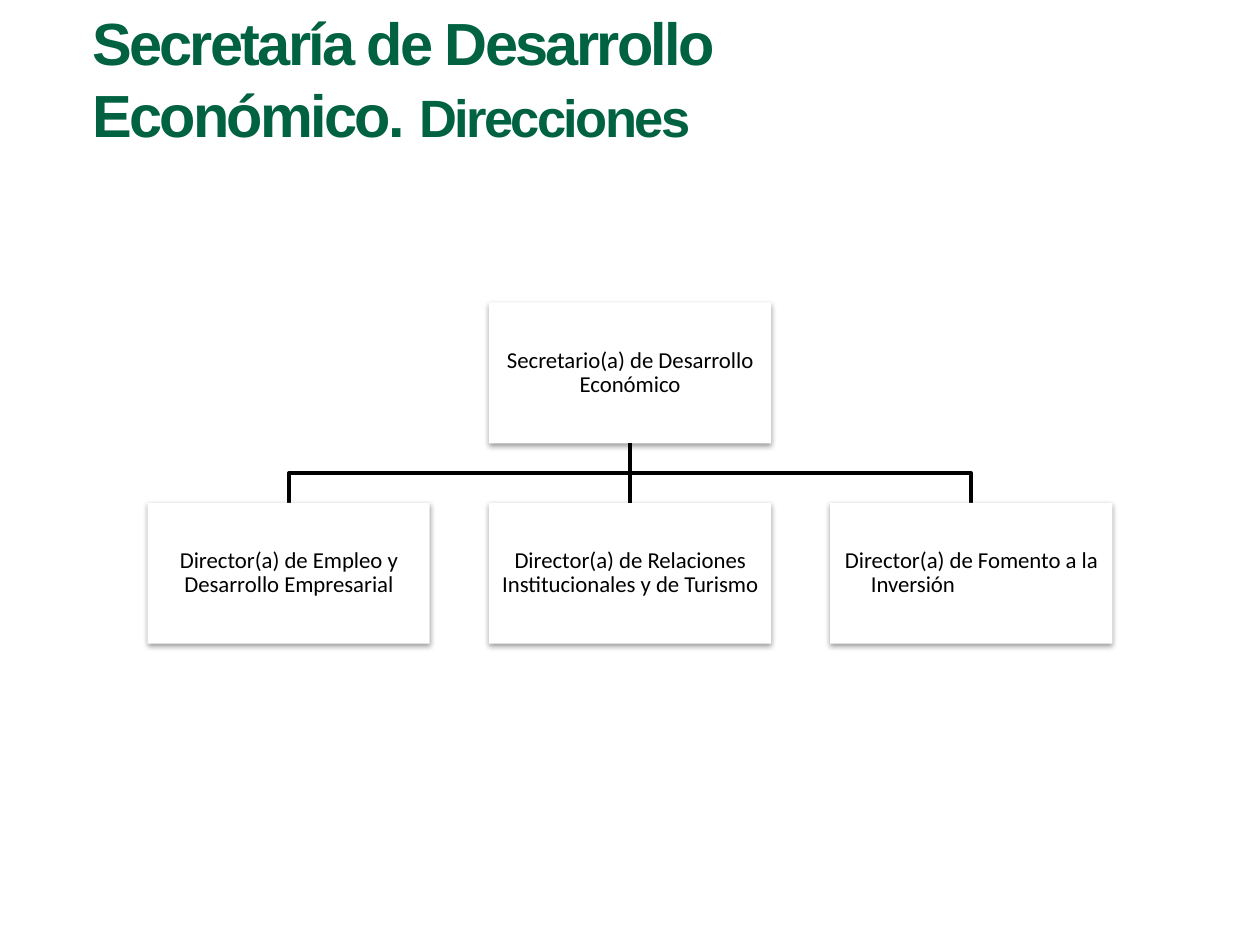
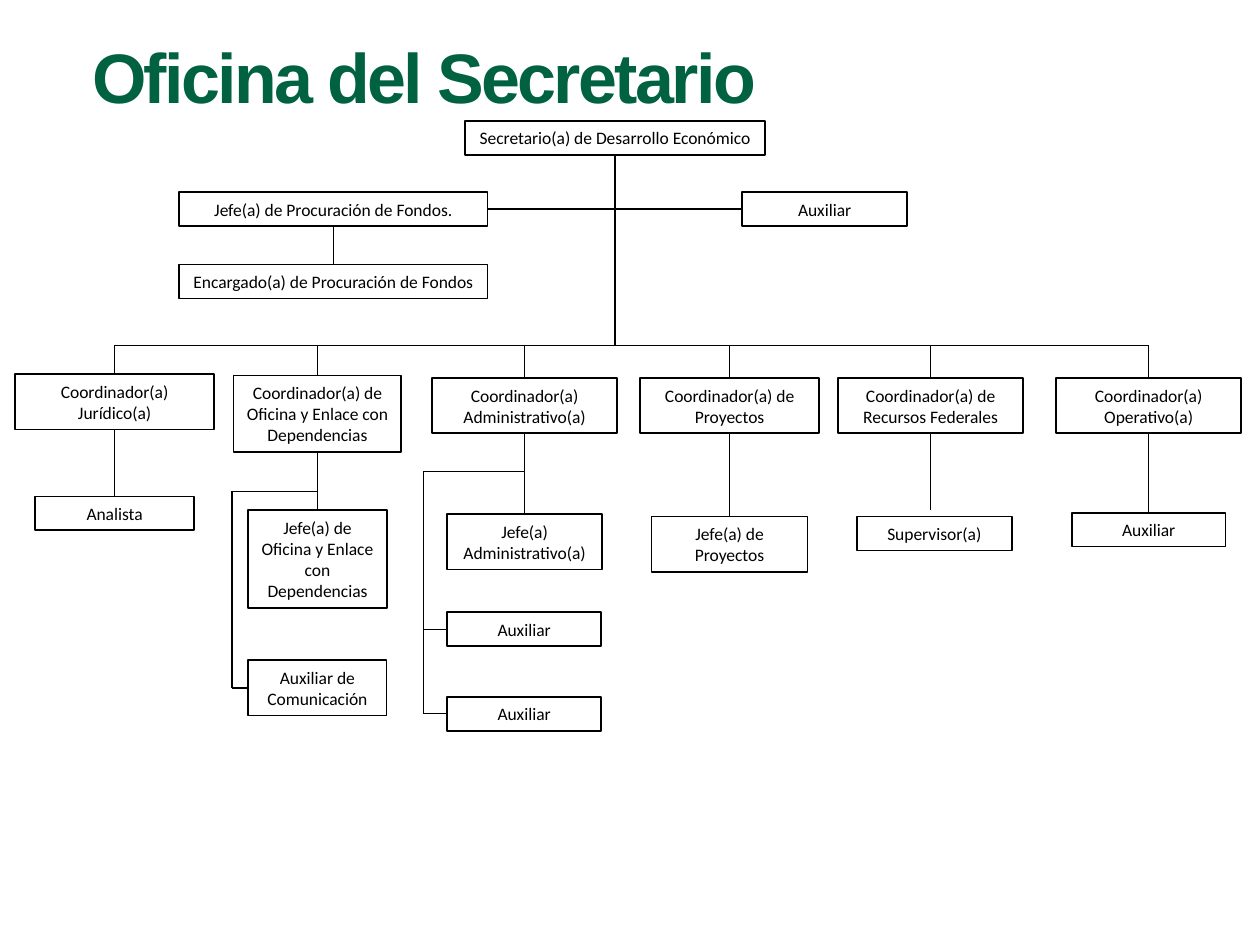
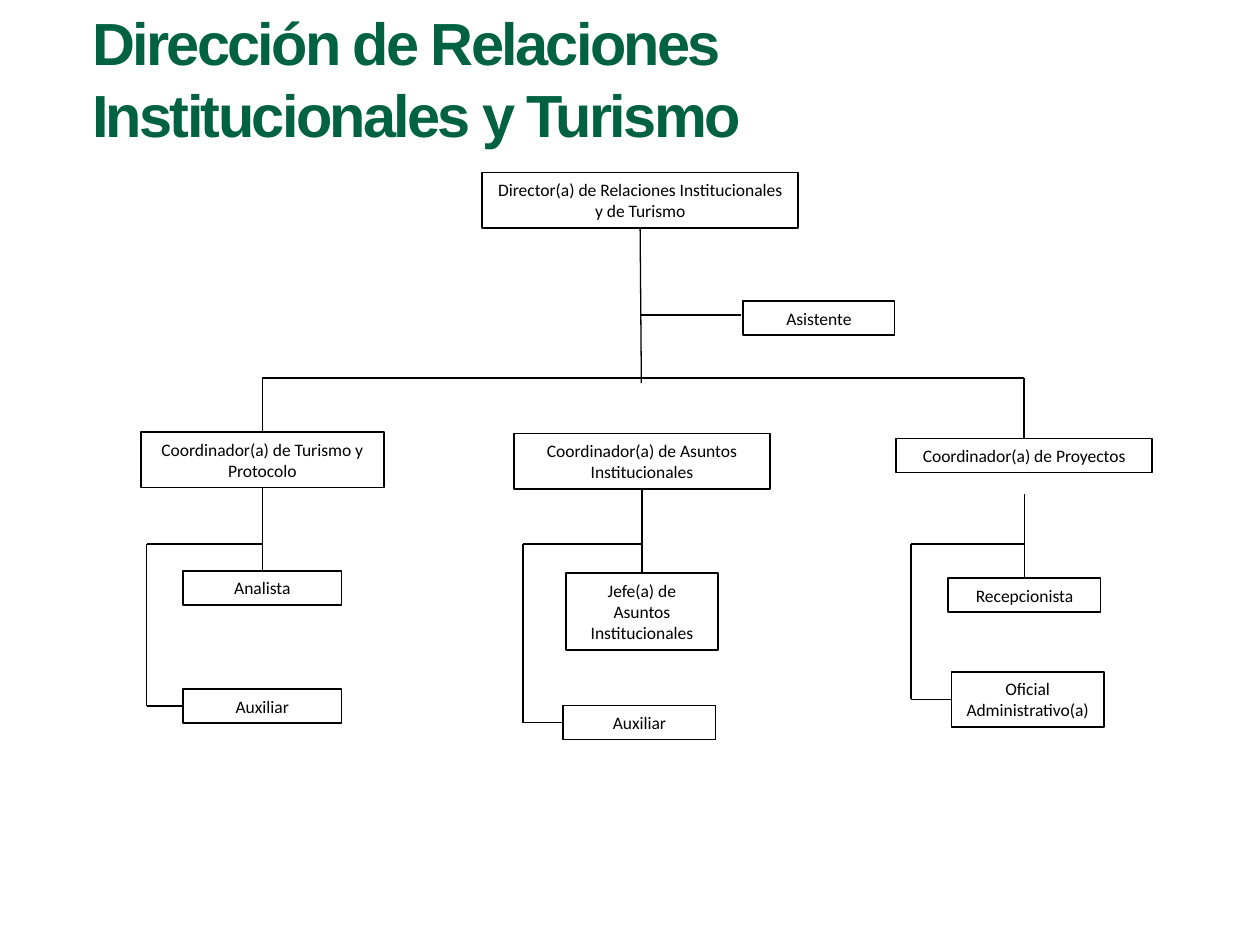
from lxml.etree import SubElement
from pptx import Presentation
from pptx.dml.color import RGBColor
from pptx.enum.shapes import MSO_CONNECTOR, MSO_SHAPE
from pptx.enum.text import MSO_ANCHOR, MSO_AUTO_SIZE, PP_ALIGN
from pptx.oxml.ns import qn
from pptx.util import Pt

GREEN = RGBColor(0x00, 0x62, 0x41)
BLACK = RGBColor(0, 0, 0)
WHITE = RGBColor(255, 255, 255)
TOP, LEFT, BOTTOM, RIGHT = range(4)
CARD_WIDTH, CARD_HEIGHT, CARD_PITCH = 161.2, 80.6, 195


def add_titled_slide(prs, runs, top, width, height):
    """Add a slide whose title is made of (text, size) runs."""
    slide = prs.slides.add_slide(prs.slide_layouts[5])
    title = slide.shapes.title
    title.left, title.top, title.width, title.height = Pt(45.4), Pt(top), Pt(width), Pt(height)
    frame = title.text_frame
    frame.auto_size = MSO_AUTO_SIZE.NONE
    frame.vertical_anchor = MSO_ANCHOR.TOP
    heading = frame.paragraphs[0]
    heading.alignment = PP_ALIGN.LEFT
    heading.line_spacing = Pt(runs[0][1] * 1.2)
    heading.font.name = "Arial"
    heading.font.bold = True
    heading.font.color.rgb = GREEN
    for text, size in runs:
        run = heading.add_run()
        run.text = text
        run.font.size = Pt(size)
        run.font._element.set("spc", "-150")
    return slide


def add_rectangle(slide, text, center, top, width, height, size):
    """Add a rectangle with centred black text and no shadow."""
    rectangle = slide.shapes.add_shape(
        MSO_SHAPE.RECTANGLE, Pt(center - width / 2), Pt(top), Pt(width), Pt(height))
    rectangle.shadow.inherit = False
    rectangle.text_frame.word_wrap = True
    label = rectangle.text_frame.paragraphs[0]
    label.text = text
    label.alignment = PP_ALIGN.CENTER
    label.font.name = "Calibri"
    label.font.size = Pt(size)
    label.font.color.rgb = BLACK
    return rectangle


def add_post(slide, text, center, top, width, lines=1):
    """Add an outlined post as tall as its lines of text."""
    post = add_rectangle(slide, text, center, top, width, 7.2 + 12.2 * lines, 10)
    post.fill.background()
    post.line.color.rgb = BLACK
    post.line.width = Pt(1)
    return post


def add_card(slide, text, center, top):
    """Add a white card with a soft shadow below."""
    card = add_rectangle(slide, text, center, top, CARD_WIDTH, CARD_HEIGHT, 13)
    card.fill.solid()
    card.fill.fore_color.rgb = WHITE
    card.line.fill.background()
    effects = card._element.spPr.find(qn("a:effectLst"))
    shadow = SubElement(effects, qn("a:outerShdw"), blurRad="40000", dist="20000",
                        dir="5400000", rotWithShape="0")
    tint = SubElement(shadow, qn("a:srgbClr"), val=str(BLACK))
    SubElement(tint, qn("a:alpha"), val="38000")
    frame = card.text_frame
    frame.margin_left = frame.margin_right = frame.margin_top = frame.margin_bottom = Pt(0.7)
    frame.paragraphs[0].line_spacing = 0.9
    return card


def add_line(slide, x1, y1, x2, y2, weight=0.75):
    """Add a straight black connector between two points."""
    connector = slide.shapes.add_connector(
        MSO_CONNECTOR.STRAIGHT, Pt(x1), Pt(y1), Pt(x2), Pt(y2))
    connector.line.color.rgb = BLACK
    connector.line.width = Pt(weight)
    SubElement(connector._element.spPr, qn("a:effectLst"))
    return connector


def link(slide, first, second, sides=(BOTTOM, TOP), weight=0.75):
    """Join two rectangles at the given sides."""
    connector = add_line(slide, 0, 0, 0, 0, weight)
    connector.begin_connect(first, sides[0])
    connector.end_connect(second, sides[1])


def hang(slide, post, x, y):
    """Run a line from a post's bottom down to a point."""
    add_line(slide, x, y, x, y).begin_connect(post, BOTTOM)


def drop(slide, y, post):
    """Run a line from a height down to the top of a post."""
    x = (post.left + post.width / 2).pt if hasattr(post.left + post.width / 2, "pt") \
        else (post.left + post.width / 2) / Pt(1)
    add_line(slide, x, y, x, y).end_connect(post, TOP)


def branch(slide, trunk_x, side_x, y, *posts):
    """Run a side branch off a trunk down to the left of some posts."""
    add_line(slide, trunk_x, y, side_x, y)
    levels = [(post.top + post.height / 2) / Pt(1) for post in posts]
    add_line(slide, side_x, y, side_x, levels[-1])
    for post, level in zip(posts, levels):
        add_line(slide, side_x, level, side_x, level).end_connect(post, LEFT)


def add_elbow(slide, points):
    """Add an open, unfilled outline through the points."""
    start, *rest = [(Pt(x), Pt(y)) for x, y in points]
    builder = slide.shapes.build_freeform(*start)
    builder.add_line_segments(rest, close=False)
    elbow = builder.convert_to_shape()
    elbow.shadow.inherit = False
    elbow.fill.background()
    elbow.line.color.rgb = BLACK
    elbow.line.width = Pt(2)


def build_directorates(prs):
    """Build the chart of the ministry's directorates."""
    slide = add_titled_slide(
        prs, [("Secretaría de Desarrollo Económico. ", 34), ("Direcciones", 30)], 0, 496.8, 90)
    middle, head_top, row_top = 360, 172.8, 287.3
    head_bottom = head_top + CARD_HEIGHT
    bus = (head_bottom + row_top) / 2
    for side in (1, -1):
        x = middle + side * CARD_PITCH
        add_elbow(slide, [(middle, head_bottom), (middle, bus), (x, bus), (x, row_top)])
    head = add_card(slide, "Secretario(a) de Desarrollo Económico", middle, head_top)
    _, tourism, investment = [
        add_card(slide, text, middle + (i - 1) * CARD_PITCH, row_top)
        for i, text in enumerate((
            "Director(a) de Empleo y Desarrollo Empresarial",
            "Director(a) de Relaciones Institucionales y de Turismo",
            "Director(a) de Fomento a la Inversión"))]
    link(slide, head, tourism, weight=2)
    label = investment.text_frame.paragraphs[0]
    label.alignment = PP_ALIGN.LEFT
    indents = label._p.get_or_add_pPr()
    indents.set("marL", str(Pt(22.5)))
    indents.set("indent", str(Pt(-14.8)))


def build_secretary_office(prs):
    """Build the chart of the secretary's office."""
    slide = add_titled_slide(prs, [("Oficina del Secretario", 40)], 15.8, 419, 55.4)
    bus = 197.3
    secretary = add_post(slide, "Secretario(a) de Desarrollo Económico", 351.4, 69.1, 171.4)
    funds = add_post(slide, "Jefe(a) de Procuración de Fondos.", 190.4, 109.8, 176.4)
    funds_clerk = add_post(slide, "Encargado(a) de Procuración de Fondos", 190.4, 151.2, 176.4)
    assistant = add_post(slide, "Auxiliar", 471.2, 109.8, 94.3)
    coordinators = [add_post(slide, *post) for post in (
        ("Coordinador(a) Jurídico(a)", 65.5, 213.8, 113.8, 2),
        ("Coordinador(a) de Oficina y Enlace con Dependencias", 181.4, 214.6, 95.8, 3),
        ("Coordinador(a) Administrativo(a)", 299.8, 216, 105.8, 2),
        ("Coordinador(a) de Proyectos", 416.9, 216, 102.2, 2),
        ("Coordinador(a) de Recursos Federales", 531.8, 216, 105.8, 2),
        ("Coordinador(a) Operativo(a)", 656.4, 216, 105.8, 2))]
    legal, liaison, admin, projects, federal, operations = coordinators
    analyst = add_post(slide, "Analista", 65.5, 283.7, 90.7)
    liaison_chief = add_post(
        slide, "Jefe(a) de Oficina y Enlace con Dependencias", 181.4, 291.6, 79.4, 4)
    admin_chief = add_post(slide, "Jefe(a) Administrativo(a)", 299.8, 293.8, 88.6, 2)
    projects_chief = add_post(slide, "Jefe(a) de Proyectos", 416.9, 295.2, 89.3, 2)
    add_post(slide, "Supervisor(a)", 533.9, 295.2, 88.6)
    operations_aide = add_post(slide, "Auxiliar", 656.4, 293, 87.8)
    press_aide = add_post(slide, "Auxiliar de Comunicación", 181.4, 377.3, 79.2, 2)
    admin_aides = [add_post(slide, "Auxiliar", 299.5, top, 87.8) for top in (349.9, 398.2)]

    hang(slide, secretary, 351.4, bus)
    link(slide, funds, assistant, (RIGHT, LEFT))
    add_line(slide, 65.5, bus, 656.4, bus)
    for coordinator in coordinators:
        drop(slide, bus, coordinator)
    for chief, report in ((funds, funds_clerk), (legal, analyst), (liaison, liaison_chief),
                          (admin, admin_chief), (projects, projects_chief),
                          (operations, operations_aide)):
        link(slide, chief, report)
    hang(slide, federal, 531.8, 291.6)
    branch(slide, 181.4, 132.5, 280.8, press_aide)
    branch(slide, 299.8, 242, 269.3, *admin_aides)


def build_tourism(prs):
    """Build the chart of institutional relations and tourism."""
    slide = add_titled_slide(
        prs, [("Dirección de Relaciones Institucionales y Turismo", 34)], 0, 531.4, 90)
    bus, branch_y = 216, 310.8
    director = add_post(
        slide, "Director(a) de Relaciones Institucionales y de Turismo", 365.8, 98.6, 180.7, 2)
    add_post(slide, "Asistente", 468, 172.1, 86.4)
    tourism = add_post(slide, "Coordinador(a) de Turismo y Protocolo", 149.9, 247, 139, 2)
    affairs = add_post(slide, "Coordinador(a) de Asuntos Institucionales", 366.8, 247.7, 146.2, 2)
    projects = add_post(slide, "Coordinador(a) de Proyectos", 585.2, 250.6, 146.2)
    analyst = add_post(slide, "Analista", 149.9, 326.2, 90.7)
    tourism_aide = add_post(slide, "Auxiliar", 149.9, 393.8, 90.7)
    affairs_chief = add_post(
        slide, "Jefe(a) de Asuntos Institucionales", 366.8, 327.6, 86.8, 3)
    affairs_aide = add_post(slide, "Auxiliar", 365.4, 403.2, 87.1)
    receptionist = add_post(slide, "Recepcionista", 585.4, 330.5, 87.1)
    officer = add_post(slide, "Oficial Administrativo(a)", 587.2, 383.8, 87.1, 2)

    hang(slide, director, 366.5, 218.9)
    add_line(slide, 366.5, 180, 423.4, 180)
    add_line(slide, 149.9, bus, 585.2, bus)
    for coordinator in (tourism, projects):
        drop(slide, bus, coordinator)
    link(slide, tourism, analyst)
    link(slide, affairs, affairs_chief)
    drop(slide, 282.2, receptionist)
    branch(slide, 149.9, 83.8, branch_y, tourism_aide)
    branch(slide, 366.8, 298.8, branch_y, affairs_aide)
    branch(slide, 585.2, 520.6, branch_y, officer)


def main():
    """Build and save the presentation."""
    prs = Presentation()
    prs.slide_width, prs.slide_height = Pt(720), Pt(540)
    build_directorates(prs)
    build_secretary_office(prs)
    build_tourism(prs)
    prs.save("out.pptx")


if __name__ == "__main__":
    main()
